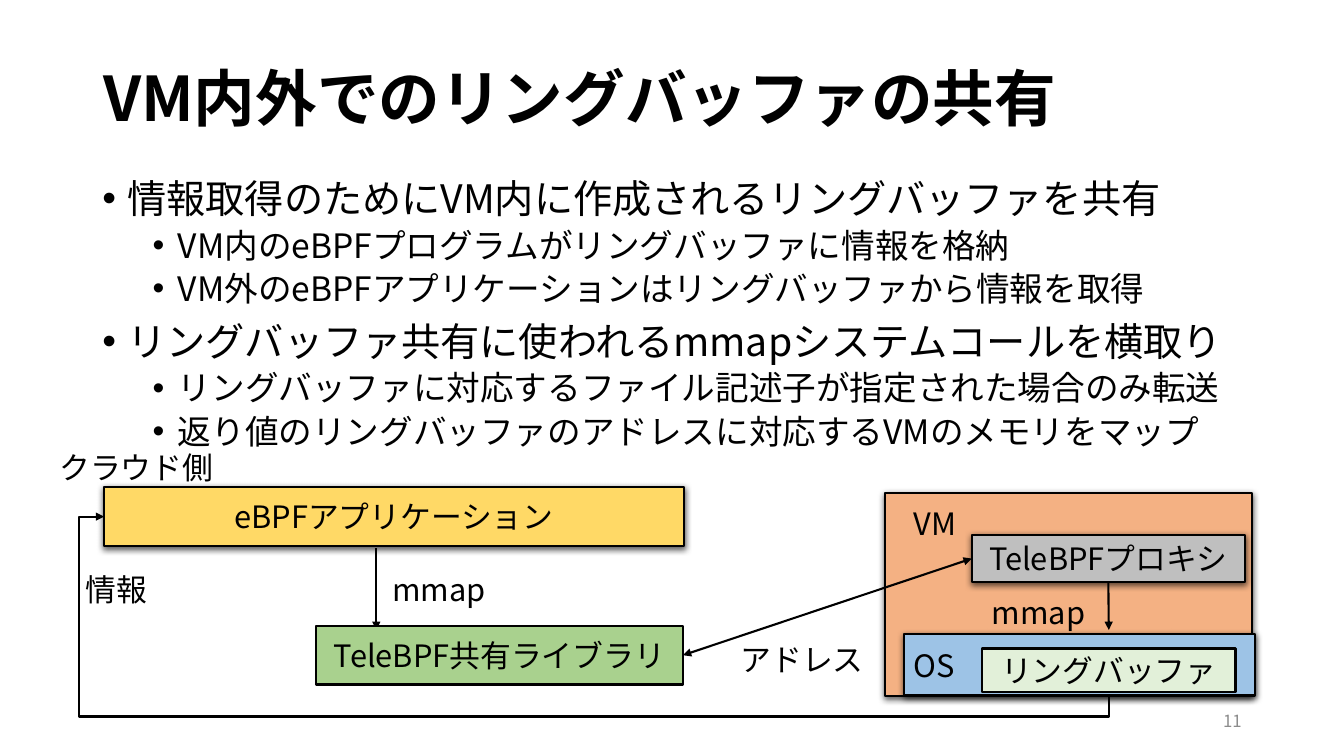
from dataclasses import dataclass

from lxml.etree import SubElement
from pptx import Presentation
from pptx.dml.color import RGBColor
from pptx.enum.lang import MSO_LANGUAGE_ID as Language
from pptx.enum.shapes import MSO_CONNECTOR as Connector, MSO_SHAPE as Preset
from pptx.enum.text import MSO_ANCHOR as Anchor, PP_ALIGN as Align
from pptx.oxml.ns import qn
from pptx.util import Emu, Inches, Pt

# Grid of 160 columns by 90 rows, with square cells
COLUMNS, ROWS = 160, 90
CELL = Inches(1) // 12

FONT = "Noto Sans CJK JP"
BLACK = RGBColor(0x00, 0x00, 0x00)
PAGE_GRAY = RGBColor(0x8C, 0x8C, 0x8C)
ORANGE = RGBColor(0xF4, 0xB1, 0x83)
YELLOW = RGBColor(0xFF, 0xD9, 0x66)
GREEN = RGBColor(0xA9, 0xD1, 0x8E)
SILVER = RGBColor(0xBF, 0xBF, 0xBF)
BLUE = RGBColor(0x9D, 0xC3, 0xE6)
PALE_GREEN = RGBColor(0xE2, 0xF0, 0xD9)
LINE_WIDTH = Pt(1.5)
DIAGRAM_SIZE = 22


@dataclass(frozen=True)
class Area:
    column: float
    row: float
    columns: float
    rows: float

    def lengths(self) -> tuple:
        return tuple(map(cells, (self.column, self.row, self.columns, self.rows)))


@dataclass(frozen=True)
class Block:
    area: Area
    fill: RGBColor
    text: str = ""
    align: Align = Align.CENTER
    shadow: bool = True


@dataclass(frozen=True)
class Label:
    area: Area
    text: str
    wrap: bool = True


@dataclass(frozen=True)
class Bullet:
    text: str
    level: int = 0


def cells(count: float) -> Emu:
    return Emu(round(count * CELL))


def write(para, text: str, *, size=DIAGRAM_SIZE, color=BLACK, bold=False, align=None):
    para.alignment = align
    span = para.add_run()
    span.text = text
    font = span.font
    font.name, font.size, font.bold = FONT, Pt(size), bold
    font.color.rgb = color
    font.language_id = Language.JAPANESE
    east_asian = SubElement(span._r.get_or_add_rPr(), qn("a:ea"))
    east_asian.set("typeface", FONT)


def add_text(page, area: Area, *, anchor=Anchor.TOP, wrap=True):
    frame = page.shapes.add_textbox(*area.lengths()).text_frame
    frame.word_wrap = wrap
    frame.vertical_anchor = anchor
    return frame


def add_bullets(page, area: Area, bullets: list) -> None:
    frame = add_text(page, area)
    for index, bullet in enumerate(bullets):
        para = frame.add_paragraph() if index else frame.paragraphs[0]
        para.level = bullet.level
        para.line_spacing = 0.9
        para.space_before = Pt(5 if bullet.level else 10)
        layout = para._p.get_or_add_pPr()
        layout.set("marL", str(cells(3 + 6 * bullet.level)))
        layout.set("indent", str(-cells(3)))
        SubElement(layout, qn("a:buFont")).set("typeface", "Arial")
        SubElement(layout, qn("a:buChar")).set("char", "•")
        write(para, bullet.text, size=24 if bullet.level else 28)


def add_block(page, block: Block):
    box = page.shapes.add_shape(Preset.RECTANGLE, *block.area.lengths())
    box.fill.solid()
    box.fill.fore_color.rgb = block.fill
    box.line.color.rgb = BLACK
    box.line.width = LINE_WIDTH
    box.shadow.inherit = False
    if block.shadow:
        effects = box._element.spPr.find(qn("a:effectLst"))
        shadow = SubElement(effects, qn("a:outerShdw"), blurRad=str(Pt(4.5)),
                            dist=str(Pt(1.5)), dir="5400000", rotWithShape="0")
        tint = SubElement(shadow, qn("a:srgbClr"), val=str(BLACK))
        SubElement(tint, qn("a:alpha"), val="63000")
    if block.text:
        box.text_frame.vertical_anchor = Anchor.MIDDLE
        write(box.text_frame.paragraphs[0], block.text, align=block.align)
    return box


def add_arrow(page, start: tuple, end: tuple, *, kind=Connector.STRAIGHT, both=False):
    arrow = page.shapes.add_connector(kind, *map(cells, (*start, *end)))
    arrow.line.color.rgb = BLACK
    arrow.line.width = LINE_WIDTH
    outline = arrow.line._get_or_add_ln()
    for tip in ("headEnd", "tailEnd") if both else ("tailEnd",):
        SubElement(outline, qn(f"a:{tip}"), type="triangle")
    SubElement(arrow._element.spPr, qn("a:effectLst"))
    return arrow


def add_return_path(page, start: tuple, end: tuple, *, bottom: float, left: float) -> None:
    """Go down to bottom, across to left, up, and then right into the end."""
    across, up = start[0] - end[0], start[1] - end[1]
    middle_x, middle_y = (start[0] + end[0]) / 2, (start[1] + end[1]) / 2
    arrow = add_arrow(page, (middle_x - up / 2, middle_y - across / 2),
                      (middle_x + up / 2, middle_y + across / 2), kind=Connector.ELBOW)
    properties = arrow._element.spPr
    properties.xfrm.set("rot", "5400000")
    properties.xfrm.set("flipH", "1")
    geometry = properties.find(qn("a:prstGeom"))
    geometry.set("prst", "bentConnector4")
    adjustments = geometry.find(qn("a:avLst"))
    shares = {"adj1": (start[1] - bottom) / up, "adj2": (start[0] - left) / across}
    for name, share in shares.items():
        SubElement(adjustments, qn("a:gd"), name=name, fmla=f"val {round(share * 100000)}")


TITLE_AREA = Area(11.1, 3.4, 138, 17.4)
BODY_AREA = Area(11, 20.8, 138, 57.1)
NUMBER_AREA = Area(113, 83.4, 36, 4.8)

BULLETS = [
    Bullet("情報取得のためにVM内に作成されるリングバッファを共有"),
    Bullet("VM内のeBPFプログラムがリングバッファに情報を格納", 1),
    Bullet("VM外のeBPFアプリケーションはリングバッファから情報を取得", 1),
    Bullet("リングバッファ共有に使われるmmapシステムコールを横取り"),
    Bullet("リングバッファに対応するファイル記述子が指定された場合のみ転送", 1),
    Bullet("返り値のリングバッファのアドレスに対応するVMのメモリをマップ", 1),
]

MACHINE = Block(Area(105.4, 58.7, 43.7, 24.2), ORANGE)
APPLICATION = Block(Area(12.4, 58, 69, 7), YELLOW, "eBPFアプリケーション")
PROXY = Block(Area(115.7, 63.7, 32.5, 5.6), SILVER, "TeleBPFプロキシ")
LIBRARY = Block(Area(37.6, 74.5, 43.7, 7), GREEN, "TeleBPF共有ライブラリ", shadow=False)
SYSTEM = Block(Area(107.6, 75.5, 41.8, 7.3), BLUE, "OS", Align.LEFT)
RING_BUFFER = Block(Area(116.9, 77.2, 30.2, 5.2), PALE_GREEN, "リングバッファ", shadow=False)

LABELS = [
    Label(Area(45.5, 67.4, 48.6, 5.6), "mmap"),
    Label(Area(107.6, 59.5, 9.6, 5.6), "VM"),
    Label(Area(116.9, 70.1, 28.8, 5.6), "mmap"),
    Label(Area(5.9, 52.8, 24.1, 5.6), "クラウド側"),
    Label(Area(87, 75.7, 18, 5.6), "アドレス"),
    Label(Area(9, 67.3, 9.8, 5.6), "情報", wrap=False),
]


def main() -> None:
    deck = Presentation()
    deck.slide_width, deck.slide_height = cells(COLUMNS), cells(ROWS)
    page = deck.slides.add_slide(deck.slide_layouts[6])

    # Title, bullets and page number
    title = add_text(page, TITLE_AREA, anchor=Anchor.MIDDLE).paragraphs[0]
    title.line_spacing = 0.9
    write(title, "VM内外でのリングバッファの共有", size=44, bold=True)
    add_bullets(page, BODY_AREA, BULLETS)
    number = add_text(page, NUMBER_AREA, anchor=Anchor.MIDDLE).paragraphs[0]
    write(number, "11", size=12, color=PAGE_GRAY, align=Align.RIGHT)

    # Boxes behind the arrows, then the arrows that run under other boxes
    _, _, proxy = [add_block(page, block) for block in (MACHINE, APPLICATION, PROXY)]
    add_arrow(page, (44.8, 65.3), (44.8, 75))
    add_arrow(page, (132, 69.3), (132, 75)).begin_connect(proxy, 2)
    add_return_path(page, (132, 82.3), (12.4, 61.5), bottom=85.3, left=9.4)

    # Boxes in front, and the address exchange between library and proxy
    library, _, _ = [add_block(page, block) for block in (LIBRARY, SYSTEM, RING_BUFFER)]
    exchange = add_arrow(page, (81.3, 78), (115.7, 66.5), both=True)
    exchange.begin_connect(library, 3)
    exchange.end_connect(proxy, 1)

    # Labels
    for label in LABELS:
        frame = add_text(page, label.area, wrap=label.wrap)
        write(frame.paragraphs[0], label.text)

    deck.save("out.pptx")


if __name__ == "__main__":
    main()
